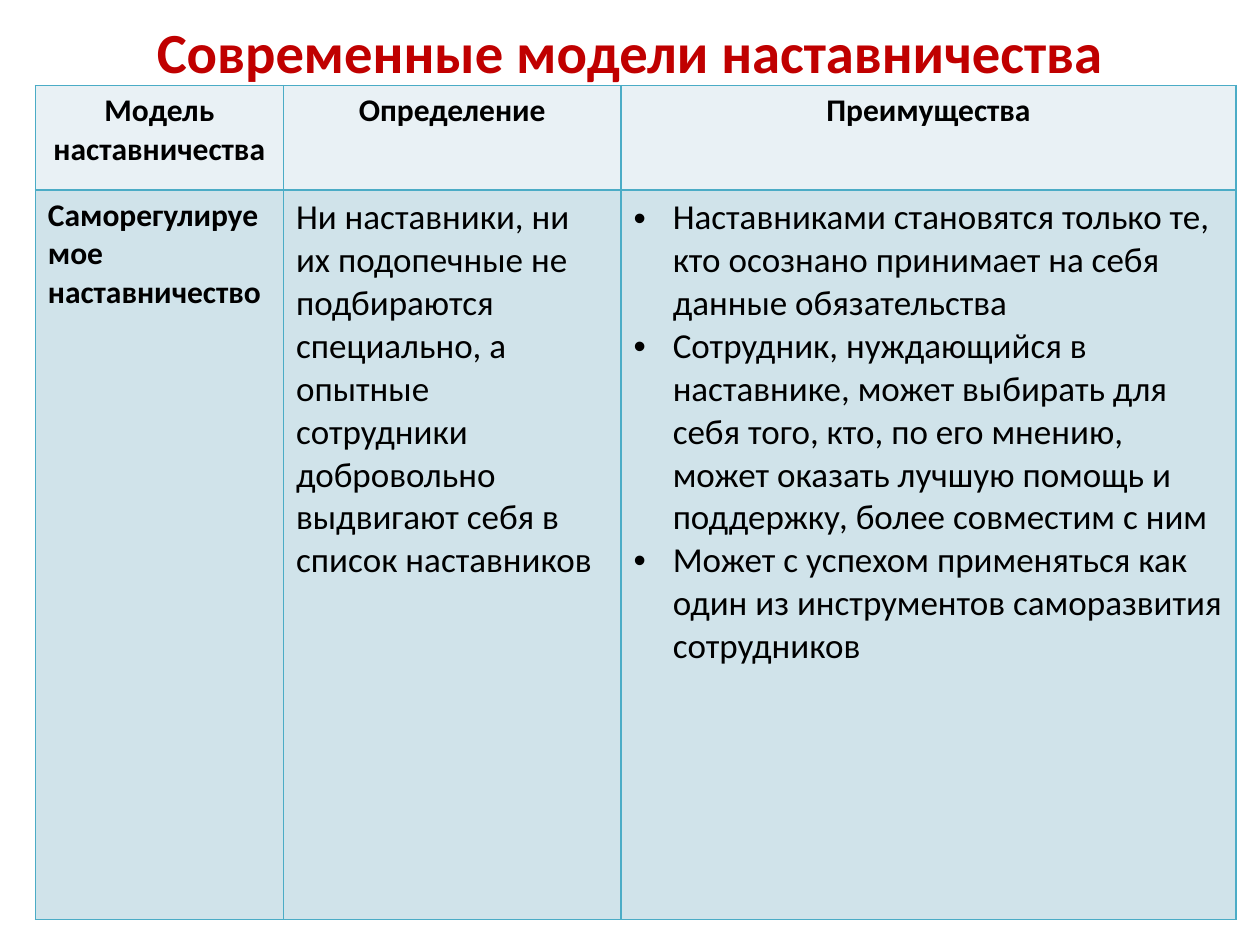
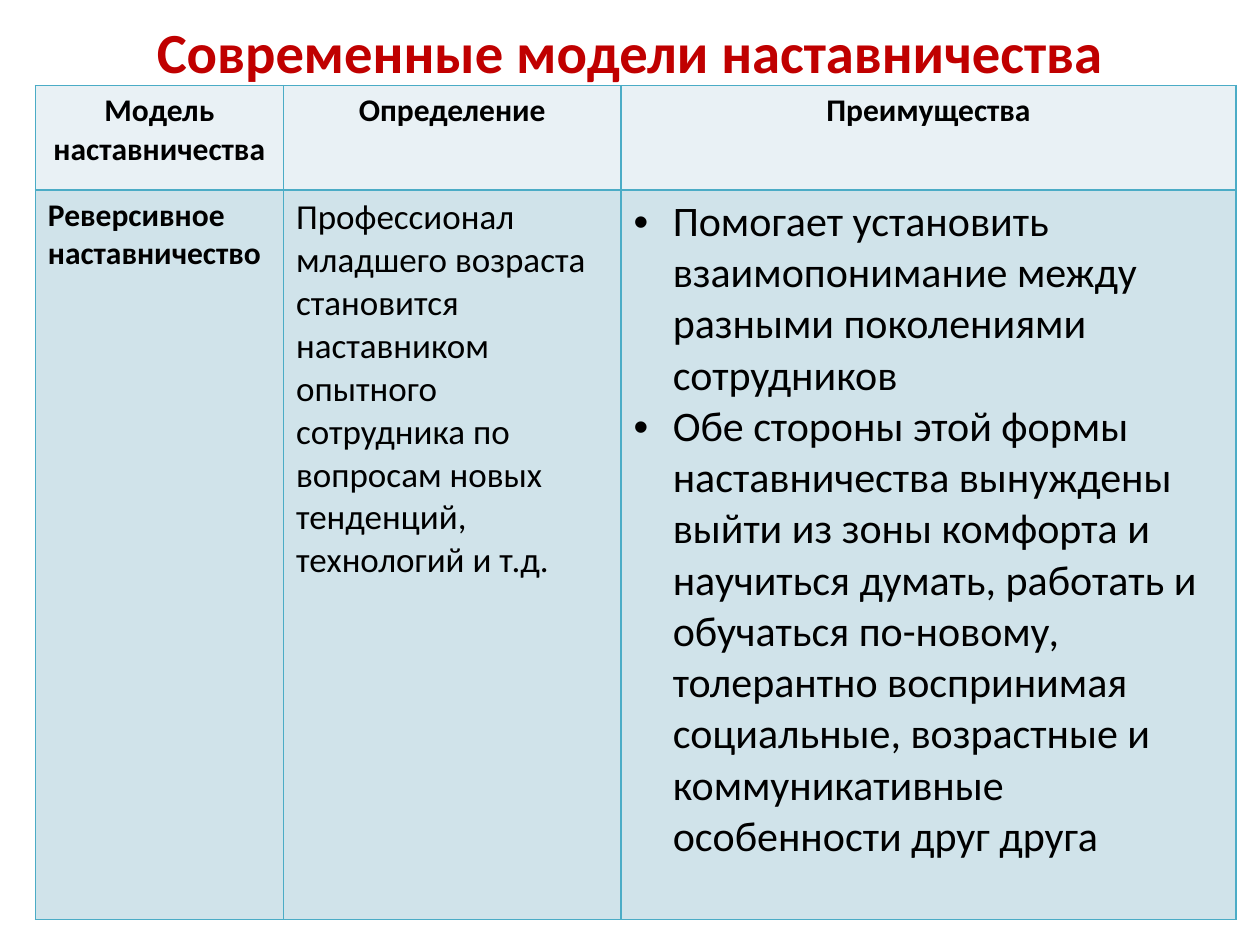
import pptx
import pptx.dml.color
import pptx.enum.text
import pptx.oxml
import pptx.oxml.ns
import pptx.util
from lxml import etree

Inches = pptx.util.Inches
Align = pptx.enum.text.PP_ALIGN

FONT = "Calibri"
RED, BLACK, TEAL = "C00000", "000000", "4BACC6"
PALE, BLUE = "E9F1F5", "D0E3EA"
TITLE = "Современные модели наставничества"
HEADS = ["Модель наставничества", "Определение", "Преимущества"]
COLS = [1.97, 2.68, 4.88]
ROWS = [0.83, 5.79]
MODELS = [
    (
        "Саморегулируемое наставничество",
        "Ни наставники, ни их подопечные не подбираются специально, а опытные "
        "сотрудники добровольно выдвигают себя в список наставников",
        [
            "Наставниками становятся только те, кто осознано принимает на себя "
            "данные обязательства",
            "Сотрудник, нуждающийся в наставнике, может выбирать для себя того, "
            "кто, по его мнению, может оказать лучшую помощь и поддержку, более "
            "совместим с ним",
            "Может с успехом применяться как один из инструментов саморазвития "
            "сотрудников",
        ],
        20,
    ),
    (
        "Реверсивное наставничество",
        "Профессионал младшего возраста становится наставником опытного "
        "сотрудника по вопросам новых тенденций, технологий и т.д.",
        [
            "Помогает установить взаимопонимание между разными поколениями "
            "сотрудников",
            "Обе стороны этой формы наставничества вынуждены выйти из зоны "
            "комфорта и научиться думать, работать и обучаться по-новому, "
            "толерантно воспринимая социальные, возрастные и коммуникативные "
            "особенности друг друга",
        ],
        24,
    ),
]


def paint(target, color):
    """Give a fill or a font a solid hex colour."""
    if hasattr(target, "solid"):
        target.solid()
        target.fore_color.rgb = pptx.dml.color.RGBColor.from_string(color)
    else:
        target.color.rgb = pptx.dml.color.RGBColor.from_string(color)


def dot(para):
    """Turn a paragraph into a hanging bullet item."""
    props = para._p.get_or_add_pPr()
    props.set("marL", str(Inches(0.31)))
    props.set("indent", str(Inches(-0.31)))
    qn = pptx.oxml.ns.qn
    etree.SubElement(props, qn("a:buFont")).set("typeface", "Arial")
    etree.SubElement(props, qn("a:buChar")).set("char", "•")


def write(frame, lines, size, bold=False, color=BLACK, align=Align.LEFT, list_=False):
    """Fill a text frame with one paragraph per line."""
    frame.word_wrap = True
    for i, line in enumerate(lines):
        para = frame.add_paragraph() if i else frame.paragraphs[0]
        para.text = line
        para.alignment = align
        if list_:
            dot(para)
        para.font.name = FONT
        para.font.size = pptx.util.Pt(size)
        para.font.bold = bold
        paint(para.font, color)


def frame_cell(cell, fill):
    """Draw thin borders round a cell and fill it."""
    props = cell._tc.get_or_add_tcPr()
    for side in "LRTB":
        props.append(pptx.oxml.parse_xml(
            f'<a:ln{side} {pptx.oxml.ns.nsdecls("a")} w="{pptx.util.Pt(1)}">'
            f'<a:solidFill><a:srgbClr val="{TEAL}"/></a:solidFill></a:ln{side}>'))
    paint(cell.fill, fill)


def add_title(slide):
    """Add the red heading."""
    box = slide.shapes.add_textbox(Inches(0.5), Inches(0.21), Inches(9), Inches(0.39))
    frame = box.text_frame
    frame.auto_size = pptx.enum.text.MSO_AUTO_SIZE.NONE
    frame.vertical_anchor = pptx.enum.text.MSO_ANCHOR.MIDDLE
    write(frame, [TITLE], 32.4, True, RED, Align.CENTER)


def add_grid(slide, name, sense, gains, size):
    """Add the table that describes one model."""
    table = slide.shapes.add_table(
        len(ROWS), len(COLS), Inches(0.28), Inches(0.68),
        Inches(sum(COLS)), Inches(sum(ROWS))).table
    table.first_row = table.horz_banding = False
    for col, width in zip(table.columns, COLS):
        col.width = Inches(width)
    for row, height, fill in zip(table.rows, ROWS, (PALE, BLUE)):
        row.height = Inches(height)
        for cell in row.cells:
            frame_cell(cell, fill)
    for i, head in enumerate(HEADS):
        write(table.cell(0, i).text_frame, [head], 18, True, align=Align.CENTER)
    write(table.cell(1, 0).text_frame, [name], 18, True)
    write(table.cell(1, 1).text_frame, [sense], 20)
    write(table.cell(1, 2).text_frame, gains, size, list_=True)


def main():
    """Build one slide per model and save the deck."""
    deck = pptx.Presentation()
    deck.slide_width, deck.slide_height = Inches(10), Inches(7.5)
    for model in MODELS:
        slide = deck.slides.add_slide(deck.slide_layouts[6])
        add_title(slide)
        add_grid(slide, *model)
    deck.save("out.pptx")


if __name__ == "__main__":
    main()
